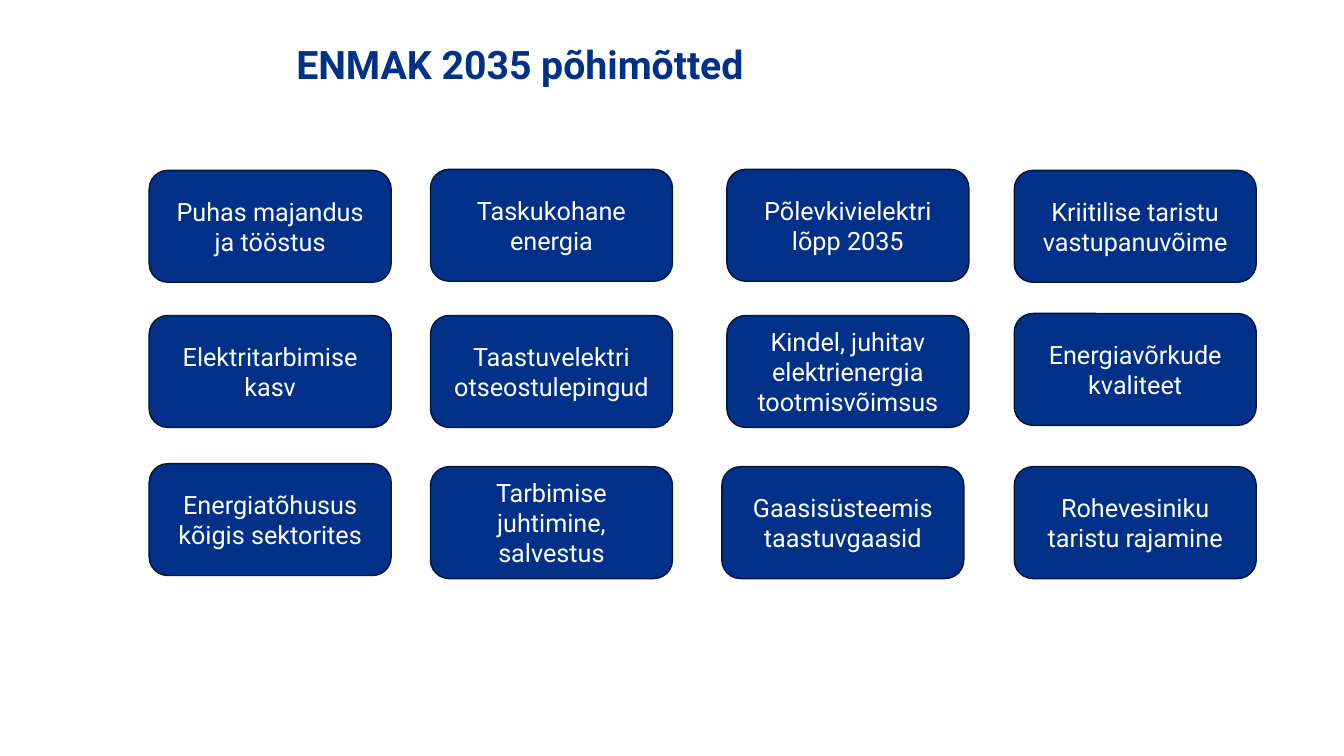
"""Build the slide of ENMAK 2035 principles."""
import pptx
import pptx.util
import pptx.dml.color
import pptx.enum.shapes
import pptx.enum.text

TITLE = "ENMAK 2035 põhimõtted"
CARDS = [
    (1.48, 1.69, ["Puhas majandus ja tööstus"]),
    (1.48, 3.13, ["Elektritarbimise kasv"]),
    (1.48, 4.6, ["Energiatõhusus kõigis sektorites"]),
    (4.27, 1.68, ["Taskukohane energia"]),
    (4.27, 3.13, ["Taastuvelektri otseostulepingud"]),
    (4.27, 4.63, ["Tarbimise juhtimine, salvestus"]),
    (7.21, 1.68, ["Põlevkivielektri lõpp 2035"]),
    (7.21, 3.13, ["Kindel, juhitav elektrienergia tootmisvõimsus"]),
    (7.16, 4.63, ["Gaasisüsteemis taastuvgaasid"]),
    (10.06, 1.69, ["Kriitilise taristu vastupanuvõime"]),
    (10.06, 3.11, ["Energiavõrkude kvaliteet"]),
    (10.06, 4.63, ["Rohevesiniku", "taristu rajamine"]),
]
CARD_SIZE = (2.4, 1.11)
COLORS = {"blue": "003087", "edge": "00153B", "white": "FFFFFF"}
FONT = "Roboto"

Inches = pptx.util.Inches
Pt = pptx.util.Pt


def color(name):
    return pptx.dml.color.RGBColor.from_string(COLORS[name])


def write(para, text, size, tint, bold=False):
    run = para.add_run()
    run.text = text
    run.font.name = FONT
    run.font.size = Pt(size)
    run.font.bold = bold
    run.font.color.rgb = color(tint)


def add_title(slide):
    box = slide.shapes.add_textbox(*map(Inches, (2.84, 0.4, 9.85, 1.11)))
    frame = box.text_frame
    frame.word_wrap = True
    para = frame.paragraphs[0]
    para.line_spacing = 0.9
    write(para, TITLE, 28, "blue", True)


def add_card(slide, left, top, lines):
    kind = pptx.enum.shapes.MSO_SHAPE.ROUNDED_RECTANGLE
    card = slide.shapes.add_shape(kind, *map(Inches, (left, top, *CARD_SIZE)))
    card.shadow.inherit = False
    card.fill.solid()
    card.fill.fore_color.rgb = color("blue")
    card.line.color.rgb = color("edge")
    card.line.width = Pt(1)
    frame = card.text_frame
    frame.word_wrap = True
    frame.vertical_anchor = pptx.enum.text.MSO_ANCHOR.MIDDLE
    for index, line in enumerate(lines):
        para = frame.add_paragraph() if index else frame.paragraphs[0]
        para.alignment = pptx.enum.text.PP_ALIGN.CENTER
        write(para, line, 18, "white")


def main():
    deck = pptx.Presentation()
    deck.slide_width = Inches(13.33)
    deck.slide_height = Inches(7.5)
    slide = deck.slides.add_slide(deck.slide_layouts[6])
    add_title(slide)
    for left, top, lines in CARDS:
        add_card(slide, left, top, lines)
    deck.save("out.pptx")


if __name__ == "__main__":
    main()
